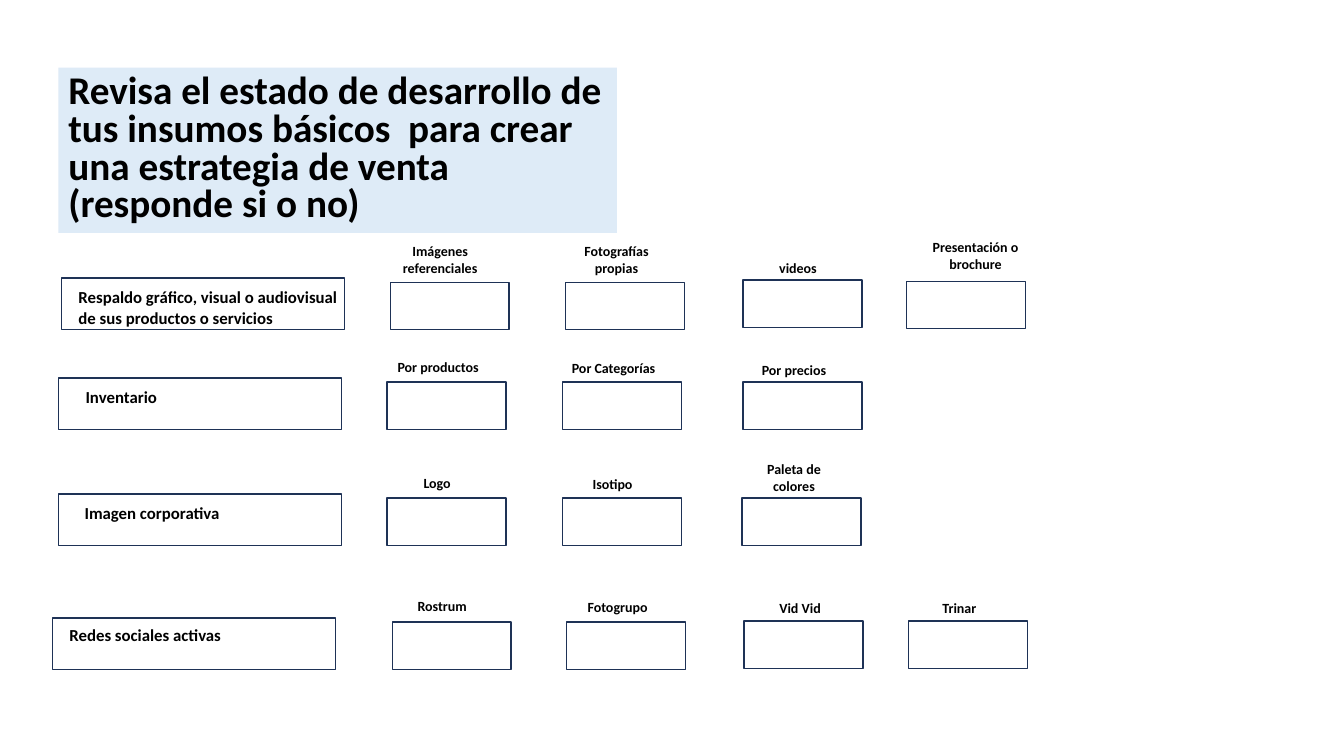
import pptx
import pptx.util
import pptx.dml.color
import pptx.enum.shapes
import pptx.enum.text
from pptx.util import Inches

NAVY = pptx.dml.color.RGBColor(0x1E, 0x32, 0x56)
PALE_BLUE = pptx.dml.color.RGBColor(0xDE, 0xEB, 0xF7)
BLACK = pptx.dml.color.RGBColor(0, 0, 0)
FONT = "Calibri"

TOPIC_SIZE = (2.81, 0.51)
ANSWER_SIZE = (1.18, 0.47)
CAPTION_WIDTH = 1.11
CAPTION_HEIGHTS = {1: 0.27, 2: 0.44}

TITLE = ("Revisa el estado de desarrollo de tus insumos básicos  para crear "
         "una estrategia de venta (responde si o no)")

# Topic: text, left, top, text offset (x, y), text height, answers
# Answer: caption, lines, left, top, caption offset x, caption bottom offset
TOPICS = [
    ("Respaldo gráfico, visual o audiovisual de sus productos o servicios",
     0.61, 2.76, 0.07, 0.04, 0.5, [
         ("Imágenes referenciales", 2, 3.87, 2.8, -0.06, 0),
         ("Fotografías propias", 2, 5.61, 2.8, -0.05, 0),
         ("videos", 1, 7.37, 2.78, -0.01, 0.02),
         ("Presentación o brochure", 2, 8.99, 2.79, 0.13, -0.03)]),
    ("Inventario", 0.58, 3.75, 0.17, 0.04, 0.3, [
        ("Por productos", 1, 3.84, 3.79, -0.05, -0.01),
        ("Por Categorías", 1, 5.58, 3.79, -0.05, 0),
        ("Por precios", 1, 7.37, 3.79, -0.05, 0.02)]),
    ("Imagen corporativa", 0.58, 4.9, 0.16, 0.04, 0.3, [
        ("Logo", 1, 3.84, 4.94, -0.06, -0.01),
        ("Isotipo", 1, 5.58, 4.94, -0.06, 0),
        ("Paleta de colores", 2, 7.36, 4.94, -0.04, 0.02)]),
    ("Redes sociales activas", 0.52, 6.13, 0.07, 0.02, 0.3, [
        ("Rostrum", 1, 3.89, 6.17, -0.06, -0.02),
        ("Fotogrupo", 1, 5.62, 6.17, -0.05, -0.01),
        ("Vid Vid", 1, 7.38, 6.16, 0, 0.01),
        ("Trinar", 1, 9.01, 6.16, -0.05, 0.01)]),
]


def write(shape, text, size, alignment=pptx.enum.text.PP_ALIGN.LEFT):
    """Put bold black wrapped text in a shape and return its paragraph."""
    shape.text_frame.word_wrap = True
    shape.text_frame.text = text
    paragraph = shape.text_frame.paragraphs[0]
    paragraph.alignment = alignment
    font = paragraph.runs[0].font
    font.name = FONT
    font.size = pptx.util.Pt(size)
    font.bold = True
    font.color.rgb = BLACK
    return paragraph


def add_rectangle(slide, left, top, width, height):
    shape = slide.shapes.add_shape(
        pptx.enum.shapes.MSO_SHAPE.RECTANGLE,
        Inches(left), Inches(top), Inches(width), Inches(height))
    shape.shadow.inherit = False
    return shape


def add_outline(slide, left, top, size):
    shape = add_rectangle(slide, left, top, *size)
    shape.fill.background()
    shape.line.color.rgb = NAVY
    shape.line.width = pptx.util.Pt(1)


def add_label(slide, left, top, width, height, text, size, alignment):
    box = slide.shapes.add_textbox(
        Inches(left), Inches(top), Inches(width), Inches(height))
    write(box, text, size, alignment)
    box.text_frame.auto_size = pptx.enum.text.MSO_AUTO_SIZE.SHAPE_TO_FIT_TEXT


def add_title(slide, left, top, width, height):
    shape = add_rectangle(slide, left, top, width, height)
    shape.fill.solid()
    shape.fill.fore_color.rgb = PALE_BLUE
    shape.line.fill.background()
    shape.text_frame.vertical_anchor = pptx.enum.text.MSO_ANCHOR.MIDDLE
    paragraph = write(shape, TITLE, 28)
    paragraph.line_spacing = 0.8
    paragraph.space_after = pptx.util.Pt(6)


def add_answer(slide, caption, lines, left, top, offset_x, offset_bottom):
    """Empty answer box with its caption above."""
    add_outline(slide, left, top, ANSWER_SIZE)
    height = CAPTION_HEIGHTS[lines]
    add_label(slide, left + offset_x, top + offset_bottom - height,
              CAPTION_WIDTH, height, caption, 10,
              pptx.enum.text.PP_ALIGN.CENTER)


def add_topic(slide, text, left, top, offset_x, offset_y, height, answers):
    """One row: framed topic name and its answer boxes."""
    add_outline(slide, left, top, TOPIC_SIZE)
    add_label(slide, left + offset_x, top + offset_y, TOPIC_SIZE[0], height,
              text, 12, pptx.enum.text.PP_ALIGN.LEFT)
    for answer in answers:
        add_answer(slide, *answer)


def main():
    presentation = pptx.Presentation()
    presentation.slide_width = Inches(13.33)
    presentation.slide_height = Inches(7.5)
    slide = presentation.slides.add_slide(presentation.slide_layouts[6])

    # Checklist rows
    for topic in TOPICS:
        add_topic(slide, *topic)

    # Heading panel
    add_title(slide, 0.58, 0.67, 5.54, 1.64)

    presentation.save("out.pptx")


if __name__ == "__main__":
    main()
